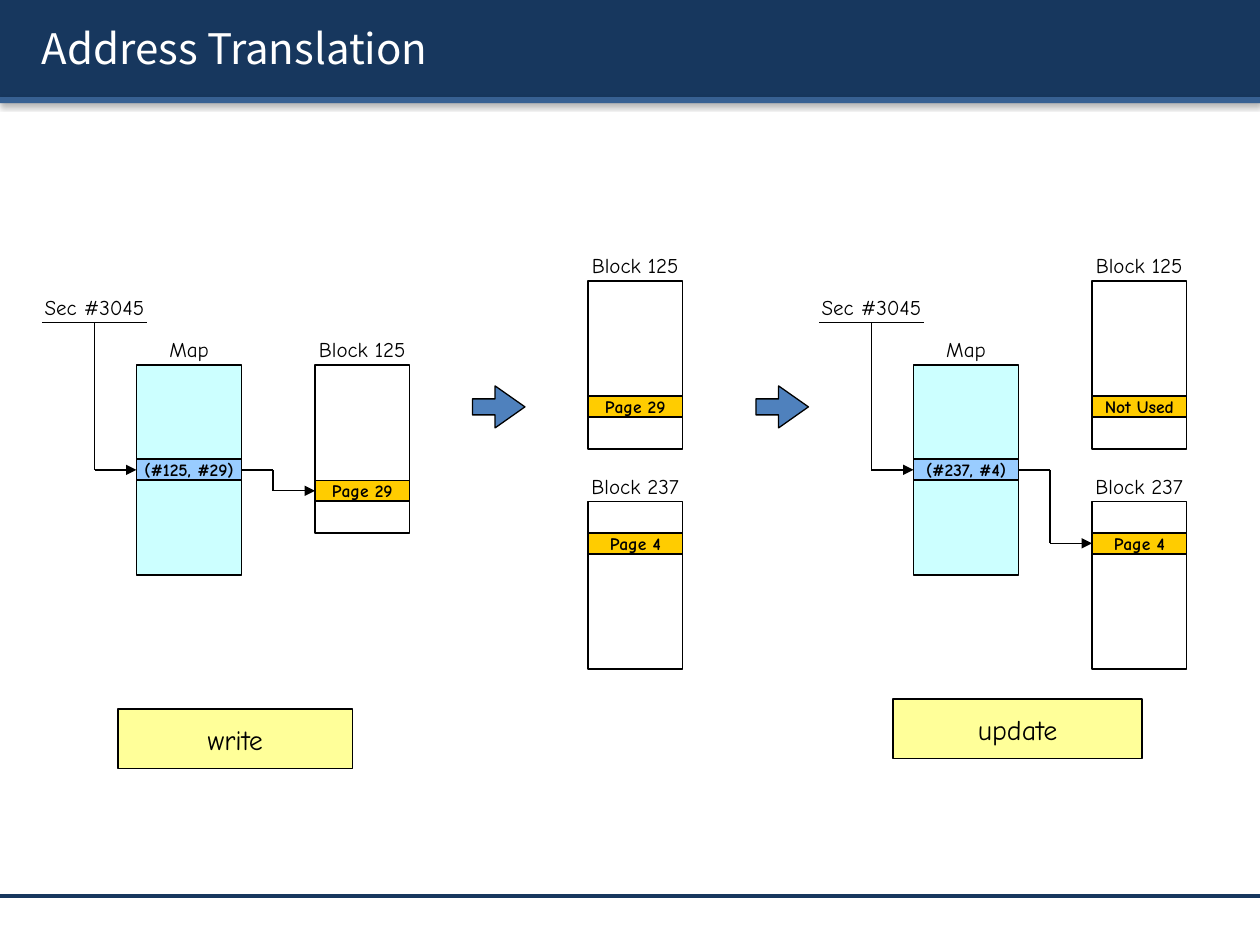
import lxml.etree
import pptx
import pptx.dml.color
import pptx.enum.shapes
import pptx.enum.text
import pptx.oxml
import pptx.oxml.ns
import pptx.util

Pt = pptx.util.Pt
SHAPE = pptx.enum.shapes.MSO_SHAPE
qn = pptx.oxml.ns.qn

COLORS = {
    "band": "17375E", "stripe": "376092", "white": "FFFFFF", "black": "000000",
    "map": "CCFFFF", "entry": "99CCFF", "page": "FFCC00", "step": "FFFF99", "arrow": "4F81BD",
}
TITLE = "Address Translation"
SECTOR = "Sec #3045"
BLOCKS = [  # name, left, top, page text, page offset
    ("Block 125", 180, 208.5, "Page 29", 66),
    ("Block 125", 336, 160.5, "Page 29", 66),
    ("Block 237", 336, 286.5, "Page 4", 18),
    ("Block 125", 624, 160.5, "Not Used", 66),
    ("Block 237", 624, 286.5, "Page 4", 18),
]
MAPS = [  # left, entry text, index of the block it points to
    (78, "(#125, #29)", 0),
    (522, "(#237, #4)", 4),
]
ARROW_LEFTS = [270, 432]
STEPS = [  # text, left, top, width
    ("write", 67.5, 405.25, 134),
    ("update", 510.25, 399.5, 142.5),
]

BLOCK_W, BLOCK_H = 54, 96
MAP_W, MAP_H, MAP_TOP = 60, 120, 208.5
CELL_H, LABEL_H, STEP_H = 12, 18, 34
ENTRY_TOP = MAP_TOP + (MAP_H - CELL_H) / 2
SECTOR_BOTTOM = 184.5
ARROW_TOP, ARROW_W, ARROW_H = 220.5, 30, 24

LABEL = {"size": Pt(12), "name": "Comic Neue"}
CELL = {"size": Pt(10), "name": "Comic Neue", "bold": True}
STEP = {"size": Pt(16), "name": "Comic Neue"}
HEADING = {"size": Pt(24), "name": "Noto Sans CJK KR"}

prs = pptx.Presentation()
prs.slide_width, prs.slide_height = Pt(720), Pt(540)
shapes = prs.slides.add_slide(prs.slide_layouts[6]).shapes


def rgb(name):
    return pptx.dml.color.RGBColor.from_string(COLORS[name])


def shadow_effect(blur, distance, angle, opacity):
    return pptx.oxml.parse_xml(
        '<a:effectLst xmlns:a="http://schemas.openxmlformats.org/drawingml/2006/main">'
        f'<a:outerShdw blurRad="{Pt(blur)}" dist="{Pt(distance)}" dir="{angle * 60000}" rotWithShape="0">'
        f'<a:srgbClr val="{COLORS["black"]}"><a:alpha val="{opacity * 1000}"/></a:srgbClr>'
        '</a:outerShdw></a:effectLst>')


def write(shape, text, formats, color="black", align="CENTER", inset=0):
    frame = shape.text_frame
    frame.word_wrap = False
    frame.vertical_anchor = pptx.enum.text.MSO_ANCHOR.MIDDLE
    for side in ("left", "right", "top", "bottom"):
        setattr(frame, f"margin_{side}", Pt(inset))
    paragraph = frame.paragraphs[0]
    paragraph.alignment = getattr(pptx.enum.text.PP_ALIGN, align)
    run = paragraph.add_run()
    run.text = text
    run.font.color.rgb = rgb(color)
    for key, value in formats.items():
        setattr(run.font, key, value)
    return run


def add_box(left, top, width, height, fill, line=1, kind=SHAPE.RECTANGLE):
    box = shapes.add_shape(kind, Pt(left), Pt(top), Pt(width), Pt(height))
    box.shadow.inherit = False
    box.fill.solid()
    box.fill.fore_color.rgb = rgb(fill)
    if line:
        box.line.color.rgb = rgb("black")
        box.line.width = Pt(line)
    else:
        box.line.fill.background()
    return box


def add_label(text, left, bottom, width):
    label = shapes.add_textbox(Pt(left), Pt(bottom - LABEL_H), Pt(width), Pt(LABEL_H))
    write(label, text, LABEL)


def add_cell(text, left, top, width, fill):
    cell = add_box(left, top, width, CELL_H, fill)
    write(cell, text, CELL)
    return cell


def add_line(start, end, color="black", width=0.75, head=False):
    line = shapes.add_connector(pptx.enum.shapes.MSO_CONNECTOR.STRAIGHT,
                                *(Pt(value) for value in (*start, *end)))
    line.line.color.rgb = rgb(color)
    line.line.width = Pt(width)
    if head:
        lxml.etree.SubElement(line.line._get_or_add_ln(), qn("a:tailEnd"), type="triangle")
    lxml.etree.SubElement(line._element.spPr, qn("a:effectLst"))
    return line


# Header and footer
for top, height, fill in [(0, 55.5, "band"), (55.5, 3.5, "stripe")]:
    band = add_box(0, top, 720, height, fill, line=0)
    properties = band._element.spPr
    properties.replace(properties.find(qn("a:effectLst")), shadow_effect(3.1, 1.6, 90, 38))
add_line((0, 512), (720, 512), "band", 2)
title = shapes.add_textbox(Pt(16.75), Pt(4.5), Pt(692), Pt(46))
title_run = write(title, TITLE, HEADING, "white", "LEFT", 7.2)
title_run.font.fill._xPr.find(qn("a:solidFill")).addnext(shadow_effect(0, 1.5, 45, 100))

# Blocks, each with one page
pages = []
for name, left, top, page, offset in BLOCKS:
    add_box(left, top, BLOCK_W, BLOCK_H, "white")
    pages.append(add_cell(page, left, top + offset, BLOCK_W, "page"))
    add_label(name, left, top, BLOCK_W)

# Maps, with the path from the sector to the page
for left, entry_text, target in MAPS:
    add_box(left, MAP_TOP, MAP_W, MAP_H, "map")
    add_label("Map", left, MAP_TOP, MAP_W)
    entry = add_cell(entry_text, left, ENTRY_TOP, MAP_W, "entry")

    sector_left, drop_x = left - 54, left - 24
    add_label(SECTOR, sector_left, SECTOR_BOTTOM, MAP_W)
    add_line((sector_left, SECTOR_BOTTOM), (sector_left + MAP_W, SECTOR_BOTTOM))

    entry_y = ENTRY_TOP + CELL_H / 2
    add_line((drop_x, SECTOR_BOTTOM), (drop_x, entry_y))
    add_line((drop_x, entry_y), (left, entry_y), head=True).end_connect(entry, 1)

    _, block_left, block_top, _, offset = BLOCKS[target]
    page_y = block_top + offset + CELL_H / 2
    right, elbow_x = left + MAP_W, left + MAP_W + 18
    add_line((right, entry_y), (elbow_x, entry_y)).begin_connect(entry, 3)
    add_line((elbow_x, entry_y), (elbow_x, page_y))
    add_line((elbow_x, page_y), (block_left, page_y), head=True).end_connect(pages[target], 1)

for left in ARROW_LEFTS:
    arrow = add_box(left, ARROW_TOP, ARROW_W, ARROW_H, "arrow", 0.75, SHAPE.RIGHT_ARROW)
    arrow.adjustments[0], arrow.adjustments[1] = 0.38, 0.71

for text, left, top, width in STEPS:
    write(add_box(left, top, width, STEP_H, "step"), text, STEP)

prs.save("out.pptx")
